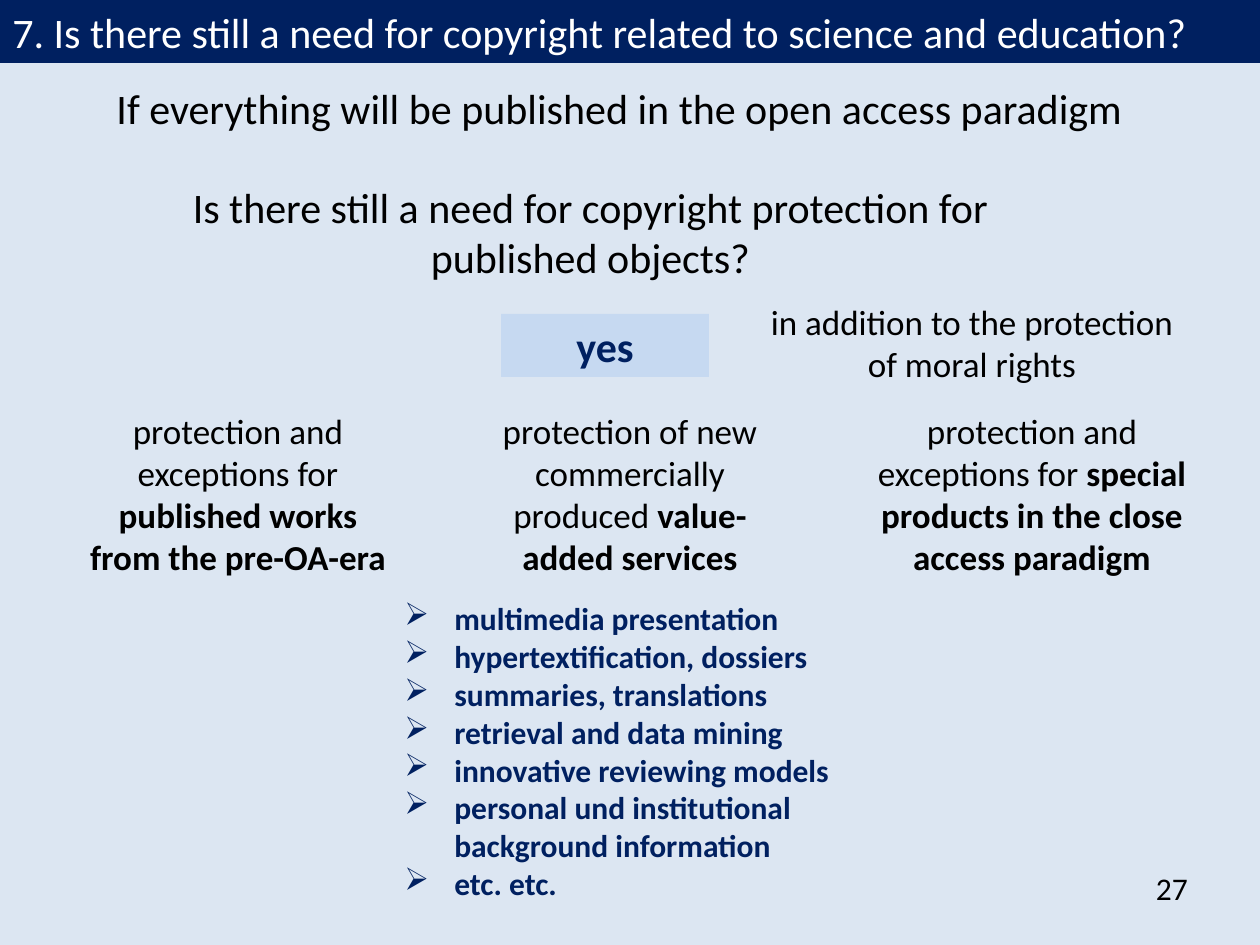
from lxml.etree import SubElement
from pptx import Presentation
from pptx.dml.color import RGBColor
from pptx.enum.shapes import MSO_SHAPE as Shape
from pptx.enum.text import MSO_ANCHOR as Anchor, PP_ALIGN as Align
from pptx.oxml.ns import qn
from pptx.util import Pt

SCALE = 914400 / 126
NAVY, BLACK, WHITE = "002060", "000000", "FFFFFF"
PAPER, PALE = "DCE6F2", "C6D9F1"

COLS = [
    (74, 328, "protection and exceptions for ",
     "published works from the pre-OA-era"),
    (466, 328, "protection of new commercially produced ",
     "value-added services"),
    (858, 348, "protection and exceptions for ",
     "special products in the close access paradigm"),
]
ITEMS = [
    "multimedia presentation",
    "hypertextification, dossiers",
    "summaries, translations",
    "retrieval and data mining",
    "innovative reviewing models",
    "personal und institutional background information",
    "etc. etc.",
]


def px(n):
    """Turn px into EMU."""
    return round(n * SCALE)


def paint(fmt, color):
    """Set a solid colour on a fill."""
    fmt.solid()
    fmt.fore_color.rgb = RGBColor.from_string(color)


def style(para, size, color=BLACK, bold=None, align=Align.CENTER):
    """Set the font and alignment of a paragraph."""
    para.alignment = align
    font = para.font
    font.name, font.size, font.bold = "Calibri", Pt(size), bold
    paint(font.fill, color)


def text(home, box, words, size, **look):
    """Place a wrapped text box and return its paragraph."""
    frame = home.add_textbox(*map(px, box)).text_frame
    frame.word_wrap = True
    para = frame.paragraphs[0]
    para.text = words
    style(para, size, **look)
    return para


def block(home, box, fill, words, size, **look):
    """Place a filled rectangle with text."""
    rect = home.add_shape(Shape.RECTANGLE, *map(px, box))
    rect.shadow.inherit = False
    rect.line.fill.background()
    paint(rect.fill, fill)
    frame = rect.text_frame
    frame.word_wrap, frame.vertical_anchor = True, Anchor.TOP
    para = frame.paragraphs[0]
    para.text = words
    style(para, size, **look)


def answer(home, box):
    """Group the answer with its side note."""
    x, y, w, h = box
    group = home.add_group_shape().shapes
    block(group, (x, y + 20, 208, 63), PALE, "yes", 24, color=NAVY, bold=True)
    text(group, (x + w - 446, y, 446, h),
         "in addition to the protection of moral rights", 20)


def columns(home, y, h):
    """Place the three reasons side by side."""
    for x, w, lead, key in COLS:
        para = text(home, (x, y, w, h), lead, 20)
        run = para.add_run()
        run.text = key
        run.font.bold = True


def bullets(home, box):
    """Place the arrow list of services."""
    frame = home.add_textbox(*map(px, box)).text_frame
    frame.word_wrap, frame.vertical_anchor = True, Anchor.MIDDLE
    frame.text = "\n".join(ITEMS)
    for para in frame.paragraphs:
        style(para, 18, color=NAVY, bold=True, align=Align.LEFT)
        props = para._p.get_or_add_pPr()
        props.set("marL", str(px(50)))
        props.set("indent", str(-px(50)))
        mark = SubElement(props, qn("a:buChar"))
        mark.set("char", "➢")
        props.insert(0, mark)


def number(home, box):
    """Place the page number without margins."""
    frame = home.add_textbox(*map(px, box)).text_frame
    frame.margin_left = frame.margin_right = 0
    frame.margin_top = frame.margin_bottom = 0
    para = frame.paragraphs[0]
    para.text = "27"
    style(para, 18, align=Align.LEFT)


def main():
    """Build the slide and save it."""
    deck = Presentation()
    deck.slide_width, deck.slide_height = px(1260), px(945)
    slide = deck.slides.add_slide(deck.slide_layouts[6])
    paint(slide.background.fill, PAPER)
    home = slide.shapes
    number(home, (1156, 869, 60, 66))
    text(home, (64, 76, 1111, 63),
         "If everything will be published in the open access paradigm", 24)
    text(home, (144, 175, 893, 115),
         "Is there still a need for copyright protection for "
         "published objects?", 24)
    block(home, (0, 0, 1260, 63), NAVY,
          "7. Is there still a need for copyright related to science "
          "and education?", 24, color=WHITE, align=Align.LEFT)
    columns(home, 403, 183)
    bullets(home, (392, 591, 456, 319))
    answer(home, (501, 294, 694, 97))
    deck.save("out.pptx")


if __name__ == "__main__":
    main()
